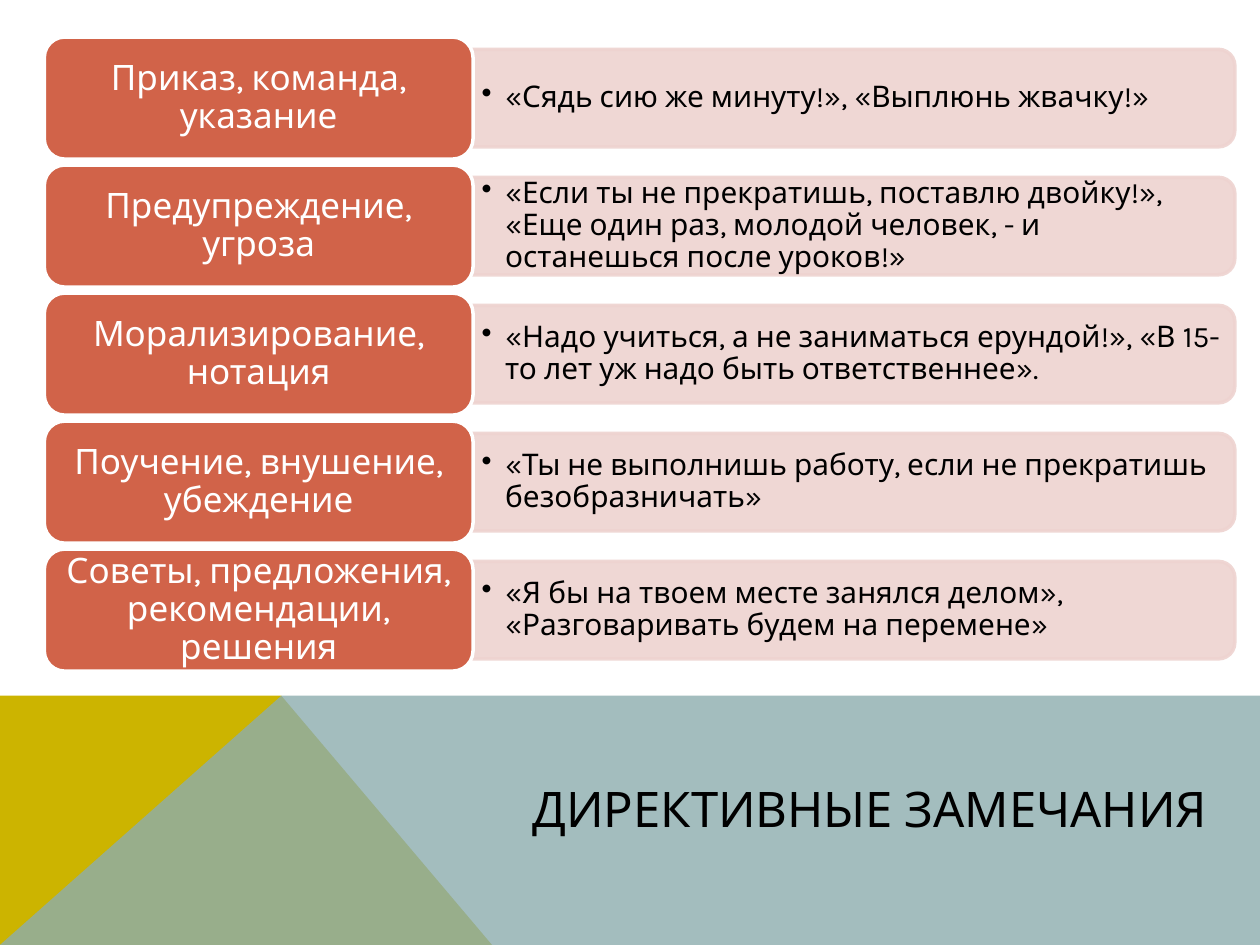
import pptx
import pptx.util
import pptx.dml.color
import pptx.enum.shapes
import pptx.enum.text
import pptx.oxml.ns
from dataclasses import dataclass
from lxml import etree

Pt = pptx.util.Pt
MSO = pptx.enum.shapes.MSO_SHAPE
ALIGN = pptx.enum.text.PP_ALIGN
ANCHOR = pptx.enum.text.MSO_ANCHOR
qn = pptx.oxml.ns.qn


@dataclass(frozen=True)
class Theme:
    font: str = "Karla"
    black: str = "000000"
    white: str = "FFFFFF"
    rust: str = "D16349"
    blush: str = "EED3D0"
    olive: str = "CCB400"
    teal: str = "8CADAE"
    title_size: int = 28
    label_size: int = 20
    quote_size: int = 17


class Deck:
    """Holds the theme and the current slide."""

    def __init__(self, s, theme):
        self.s = s
        self.theme = theme

    def color(self, fmt, rgb, alpha=100):
        fmt.solid()
        fmt.fore_color.rgb = pptx.dml.color.RGBColor.from_string(rgb)
        if alpha < 100:
            clr = fmt._xPr.find(".//" + qn("a:srgbClr"))
            etree.SubElement(clr, qn("a:alpha"), val=str(alpha * 1000))

    def paint(self, sp, fill, line=None, alpha=100):
        sp.shadow.inherit = False
        self.color(sp.fill, fill, alpha)
        if line:
            self.color(sp.line.fill, line, alpha)
            sp.line.width = Pt(2)
        else:
            sp.line.fill.background()

    def polygon(self, points, fill, alpha=100):
        pts = [(Pt(x), Pt(y)) for x, y in points]
        fb = self.s.shapes.build_freeform(*pts[0], scale=1.0)
        fb.add_line_segments(pts[1:], close=True)
        self.paint(fb.convert_to_shape(), fill, alpha=alpha)

    def set_text(self, sp, text, size, color, align, inset, spacing=1.0):
        tf = sp.text_frame
        tf.word_wrap = True
        tf.vertical_anchor = ANCHOR.MIDDLE
        tf.margin_left = tf.margin_right = Pt(inset[0])
        tf.margin_top = tf.margin_bottom = Pt(inset[1])
        p = tf.paragraphs[0]
        p.alignment = align
        p.line_spacing = spacing
        r = p.add_run()
        r.text = text
        r.font.name = self.theme.font
        r.font.size = Pt(size)
        self.color(r.font.fill, color)
        return p

    def title(self, text, x, y, w, h):
        sp = self.s.shapes.add_textbox(Pt(x), Pt(y), Pt(w), Pt(h))
        self.set_text(sp, text, self.theme.title_size, self.theme.black,
                      ALIGN.RIGHT, (7.2, 3.6))

    def label(self, text, x, y, w, h):
        sp = self.s.shapes.add_shape(MSO.ROUNDED_RECTANGLE, Pt(x), Pt(y), Pt(w), Pt(h))
        self.paint(sp, self.theme.rust, self.theme.white)
        self.set_text(sp, text, self.theme.label_size, self.theme.white,
                      ALIGN.CENTER, (5.4, 2.7), 0.9)

    def bar(self, x, y, w, h):
        # Turned a quarter so that the rounded corners face right
        sp = self.s.shapes.add_shape(MSO.ROUND_2_SAME_RECTANGLE, Pt(x + (w - h) / 2),
                                     Pt(y + (h - w) / 2), Pt(h), Pt(w))
        sp.rotation = 90
        self.paint(sp, self.theme.blush, self.theme.blush, alpha=90)

    def quote(self, text, x, y, w, h):
        sp = self.s.shapes.add_textbox(Pt(x), Pt(y), Pt(w), Pt(h))
        p = self.set_text(sp, text, self.theme.quote_size, self.theme.black,
                          ALIGN.LEFT, (4.8, 2.4), 0.9)
        pPr = p._p.get_or_add_pPr()
        pPr.set("marL", str(Pt(13.5)))
        pPr.set("indent", str(-Pt(13.5)))
        etree.SubElement(pPr, qn("a:buChar"), char="•")


ROWS = [
    ("Приказ, команда, указание",
     "«Сядь сию же минуту!», «Выплюнь жвачку!»"),
    ("Предупреждение, угроза",
     "«Если ты не прекратишь, поставлю двойку!», «Еще один раз, "
     "молодой человек, - и останешься после уроков!»"),
    ("Морализирование, нотация",
     "«Надо учиться, а не заниматься ерундой!», «В 15-то лет уж надо "
     "быть ответственнее»."),
    ("Поучение, внушение, убеждение",
     "«Ты не выполнишь работу, если не прекратишь безобразничать»"),
    ("Советы, предложения, рекомендации, решения",
     "«Я бы на твоем месте занялся делом», «Разговаривать будем на перемене»"),
]


def main():
    prs = pptx.Presentation()
    prs.slide_width, prs.slide_height = Pt(720), Pt(540)
    theme = Theme()
    deck = Deck(prs.slides.add_slide(prs.slide_layouts[6]), theme)

    # Bottom band
    top, peak = 397.6, 160.8
    deck.polygon([(0, 540), (0, top), (peak, top), (281.2, 540)], theme.olive)
    deck.polygon([(0, 540), (peak, top), (720, top), (720, 540)], theme.teal, alpha=80)
    deck.title("ДИРЕКТИВНЫЕ ЗАМЕЧАНИЯ", 105, 440, 592, 43.2)

    # Rows: a label on the left, its examples on the right
    first, pitch = 21.2, 73.15
    label_h, bar_h, quote_h = 69.7, 55.7, 50.3
    for i, (label, quote) in enumerate(ROWS):
        y = first + i * pitch
        deck.bar(270, y + (label_h - bar_h) / 2, 435.6, bar_h)
        deck.quote(quote, 270.4, y + (label_h - quote_h) / 2, 432.8, quote_h)
        deck.label(label, 25.3, y, 245, label_h)

    prs.save("out.pptx")


if __name__ == "__main__":
    main()
